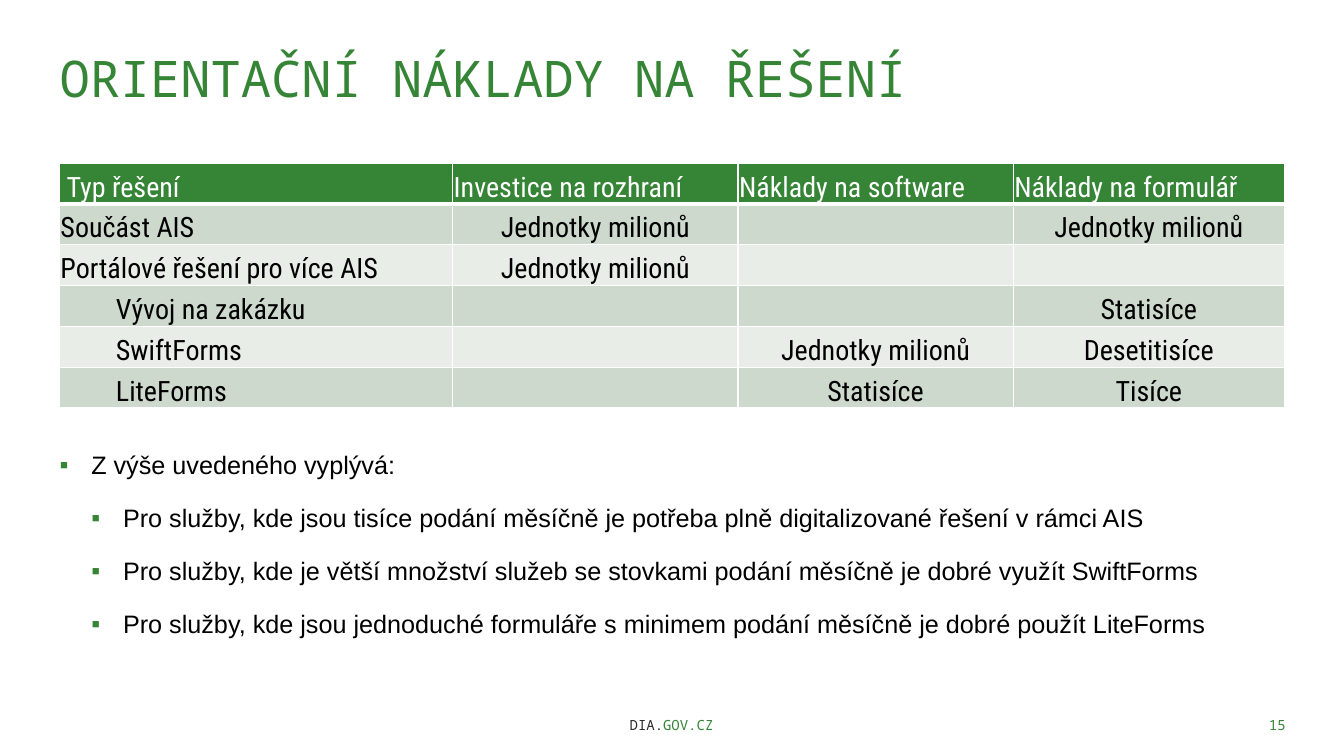
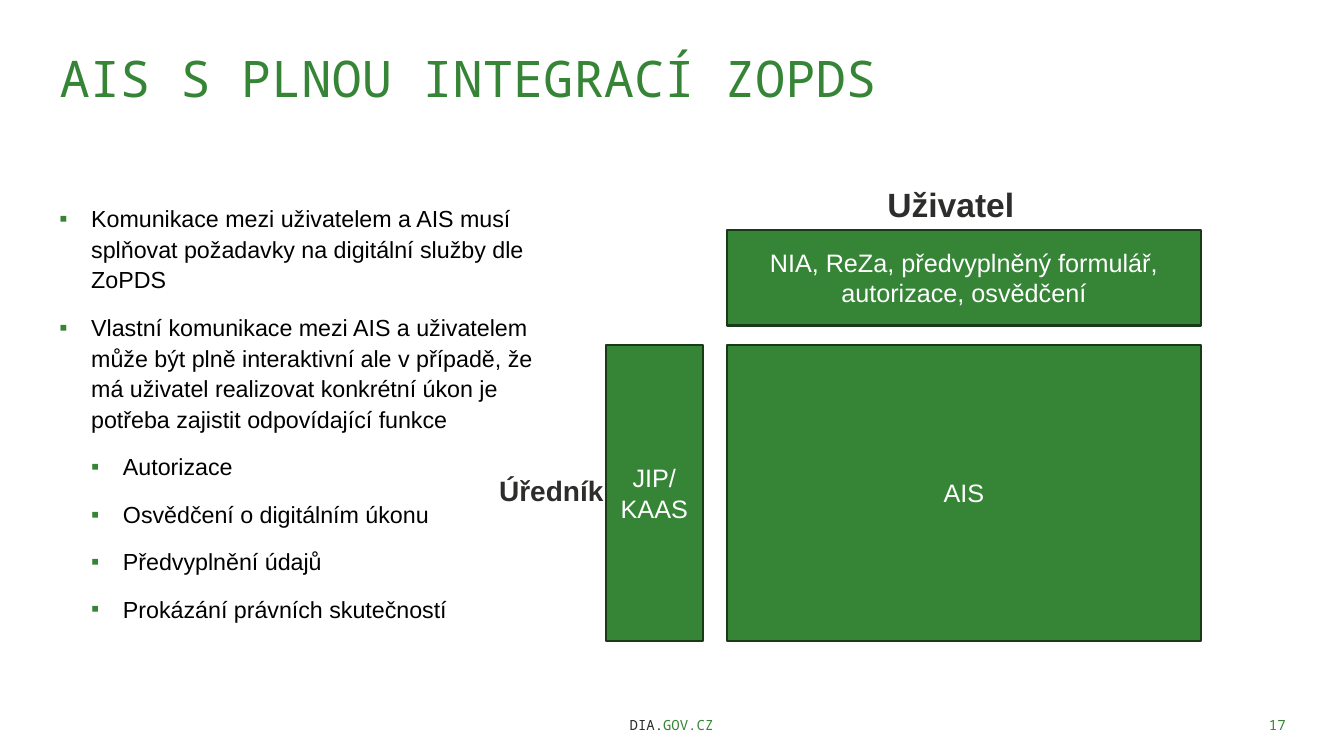
from lxml import etree
from pptx import Presentation
from pptx.dml.color import RGBColor
from pptx.enum import shapes, text
from pptx.oxml import ns
from pptx.util import Inches, Pt

HUE = {"green": "368537", "edge": "183A18", "ink": "2E2C2B", "label": "2E2D2C",
       "black": "000000", "white": "FFFFFF", "dark": "CED9CE", "light": "E8EDE8"}
MONO, SANS, SLIM = "Noto Sans Mono", "Arial", "Roboto Condensed"
LEFT, WIDE = 0.59, 12.15
STEP = 0.315
ALIGN = text.PP_ALIGN
ANCHOR = text.MSO_ANCHOR

COLS = [3.9, 2.83, 2.73, 2.69]
ROW = 0.405
COSTS = [
    ("Typ řešení", "Investice na rozhraní", "Náklady na software", "Náklady na formulář"),
    ("Součást AIS", "Jednotky milionů", "", "Jednotky milionů"),
    ("Portálové řešení pro více AIS", "Jednotky milionů", "", ""),
    ("Vývoj na zakázku", "", "", "Statisíce"),
    ("SwiftForms", "", "Jednotky milionů", "Desetitisíce"),
    ("LiteForms", "", "Statisíce", "Tisíce"),
]
SUBROW = 3  # first row of the indented options

RESULTS = [
    (0, "Z výše uvedeného vyplývá:"),
    (1, "Pro služby, kde jsou tisíce podání měsíčně je potřeba plně digitalizované řešení v rámci AIS"),
    (1, "Pro služby, kde je větší množství služeb se stovkami podání měsíčně je dobré využít SwiftForms"),
    (1, "Pro služby, kde jsou jednoduché formuláře s minimem podání měsíčně je dobré použít LiteForms"),
]
NEEDS = [
    (0, "Komunikace mezi uživatelem a AIS musí splňovat požadavky na digitální služby dle ZoPDS"),
    (0, "Vlastní komunikace mezi AIS a uživatelem může být plně interaktivní ale v případě, "
        "že má uživatel realizovat konkrétní úkon je potřeba zajistit odpovídající funkce"),
    (1, "Autorizace"),
    (1, "Osvědčení o digitálním úkonu"),
    (1, "Předvyplnění údajů"),
    (1, "Prokázání právních skutečností"),
]
BLOCKS = [
    ("AIS", 7.21, 3.42, 4.7, 2.94),
    ("JIP/ KAAS", 6.01, 3.42, 0.96, 2.94),
    ("NIA, ReZa, předvyplněný formulář, autorizace, osvědčení", 7.21, 2.28, 4.7, 0.95),
]
ROLES = [("Úředník", 20, 4.95, 4.7, 1.06, 0.37), ("Uživatel", 24, 8.8, 1.82, 1.32, 0.4)]


def rgb(name):
    return RGBColor.from_string(HUE[name])


def add_run(para, words, size, face, hue, bold=False):
    run = para.add_run()
    run.text = words
    font = run.font
    font.size, font.name, font.bold = Pt(size), face, bold
    font.color.rgb = rgb(hue)


def add_box(slide, x, y, w, h, wrap=True, inset=0):
    frame = slide.shapes.add_textbox(*map(Inches, (x, y, w, h))).text_frame
    frame.word_wrap = wrap
    frame.margin_left = frame.margin_right = Inches(inset)
    frame.margin_top = frame.margin_bottom = Inches(inset / 2)
    return frame


def add_base(deck, title, page):
    """Add a slide with its title, site address and page number."""
    slide = deck.slides.add_slide(deck.slide_layouts[5])
    head = slide.shapes.title
    head.left, head.top, head.width, head.height = map(Inches, (LEFT, 0.47, WIDE, 1.42))
    frame = head.text_frame
    frame.margin_left = frame.margin_right = frame.margin_top = frame.margin_bottom = 0
    frame.vertical_anchor = ANCHOR.TOP
    frame.auto_size = text.MSO_AUTO_SIZE.NONE
    frame.word_wrap = True
    frame.paragraphs[0].alignment = ALIGN.LEFT
    add_run(frame.paragraphs[0], title, 36, MONO, "green")
    feet = [
        (3.72, 5.88, ALIGN.CENTER, [("DIA.", "ink"), ("GOV.CZ", "green")]),
        (10.75, 2.1, ALIGN.RIGHT, [(str(page), "green")]),
    ]
    for x, w, align, runs in feet:
        foot = add_box(slide, x, 6.92, w, 0.4, inset=0.1)
        foot.vertical_anchor = ANCHOR.BOTTOM
        foot.paragraphs[0].alignment = align
        for words, hue in runs:
            add_run(foot.paragraphs[0], words, 10, MONO, hue)
    return slide


def add_list(slide, items, spot, size, pitch):
    frame = add_box(slide, *spot)
    for i, (level, words) in enumerate(items):
        para = frame.add_paragraph() if i else frame.paragraphs[0]
        props = para._p.get_or_add_pPr()
        props.set("marL", str(Inches(STEP * (level + 1))))
        props.set("indent", str(-Inches(STEP)))
        tint = etree.SubElement(props, ns.qn("a:buClr"))
        etree.SubElement(tint, ns.qn("a:srgbClr"), val=HUE["green"])
        etree.SubElement(props, ns.qn("a:buFont"), typeface=SANS)
        etree.SubElement(props, ns.qn("a:buChar"), char="▪")
        para.level = level
        para.line_spacing = pitch
        para.space_before, para.space_after = Pt(8 if i else 0), Pt(4)
        add_run(para, words, size, SANS, "black")


def set_edges(cell, row):
    props = cell._tc.get_or_add_tcPr()
    heavy = {0: "B", 1: "T"}.get(row)
    for side in "LRTB":
        line = etree.SubElement(props, ns.qn("a:ln" + side),
                                w=str(Pt(3 if side == heavy else 1)))
        fill = etree.SubElement(line, ns.qn("a:solidFill"))
        etree.SubElement(fill, ns.qn("a:srgbClr"), val=HUE["white"])


def add_costs(slide):
    size = (LEFT, 1.62, WIDE, ROW * len(COSTS))
    table = slide.shapes.add_table(len(COSTS), len(COLS), *map(Inches, size)).table
    for col, width in zip(table.columns, COLS):
        col.width = Inches(width)
    for r, row in enumerate(COSTS):
        table.rows[r].height = Inches(ROW)
        for c, words in enumerate(row):
            cell = table.cell(r, c)
            set_edges(cell, r)
            cell.fill.solid()
            cell.fill.fore_color.rgb = rgb("green" if r == 0 else "dark" if r % 2 else "light")
            cell.vertical_anchor = ANCHOR.BOTTOM
            cell.margin_left = cell.margin_right = cell.margin_top = Inches(0.01)
            cell.margin_bottom = 0
            if c == 0 and r == 0:
                cell.margin_left = Inches(0.07)
            elif c == 0 and r >= SUBROW:
                cell.margin_left = Inches(0.56)
            if words:
                para = cell.text_frame.paragraphs[0]
                para.alignment = ALIGN.CENTER if r and c else ALIGN.LEFT
                add_run(para, words, 20, SLIM, "black" if r else "white")


def add_block(slide, words, *spot):
    block = slide.shapes.add_shape(shapes.MSO_SHAPE.RECTANGLE, *map(Inches, spot))
    block.shadow.inherit = False
    block.fill.solid()
    block.fill.fore_color.rgb = rgb("green")
    block.line.color.rgb = rgb("edge")
    block.line.width = Pt(1.5)
    frame = block.text_frame
    frame.word_wrap = True
    frame.vertical_anchor = ANCHOR.MIDDLE
    frame.paragraphs[0].alignment = ALIGN.CENTER
    add_run(frame.paragraphs[0], words, 18, SANS, "white")


def main():
    deck = Presentation()
    deck.slide_width, deck.slide_height = Inches(13.33), Inches(7.5)

    costs = add_base(deck, "ORIENTAČNÍ NÁKLADY NA ŘEŠENÍ", 15)
    add_costs(costs)
    add_list(costs, RESULTS, (LEFT, 4.4, WIDE, 2.41), 18, 1.2)

    scheme = add_base(deck, "AIS S PLNOU INTEGRACÍ ZOPDS", 17)
    add_list(scheme, NEEDS, (LEFT, 2, 4.83, 4.53), 16.6, 1.1)
    for block in BLOCKS:
        add_block(scheme, *block)
    for words, size, *spot in ROLES:
        frame = add_box(scheme, *spot, wrap=False)
        add_run(frame.paragraphs[0], words, size, SANS, "label", bold=True)

    deck.save("out.pptx")


if __name__ == "__main__":
    main()
